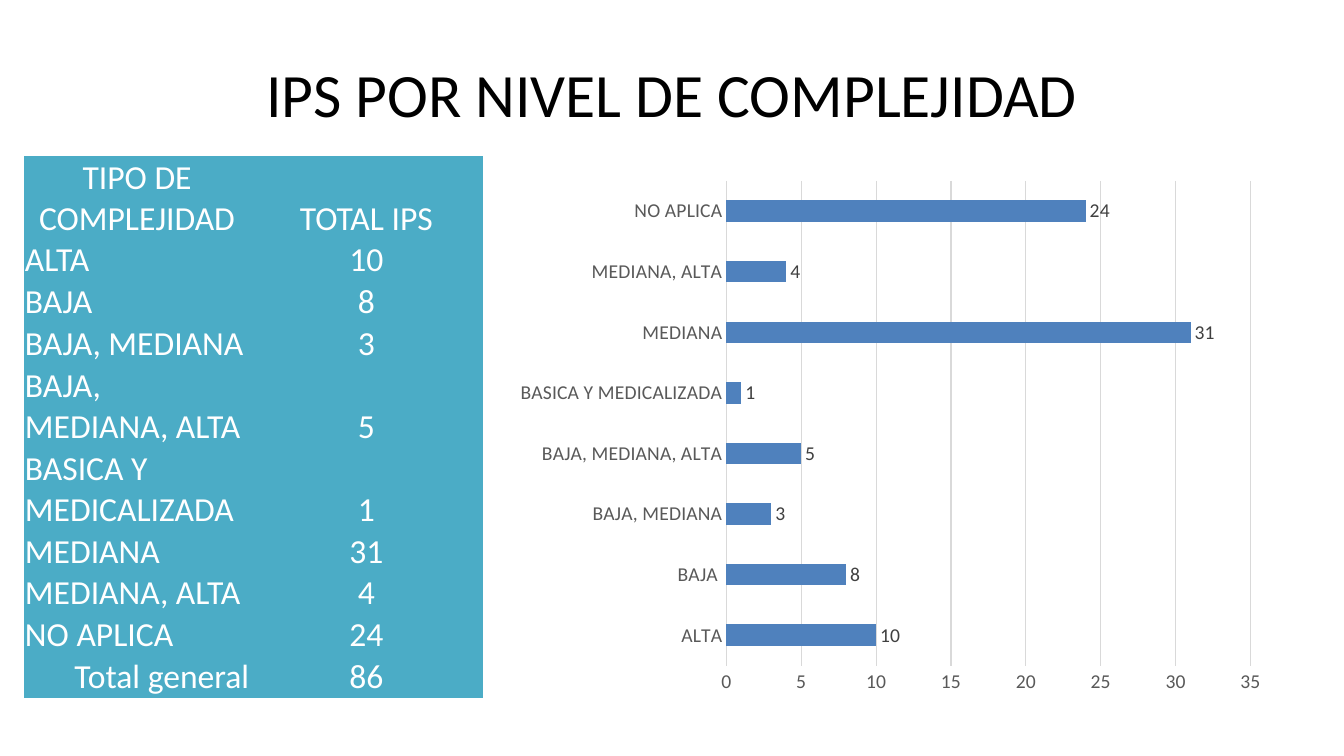
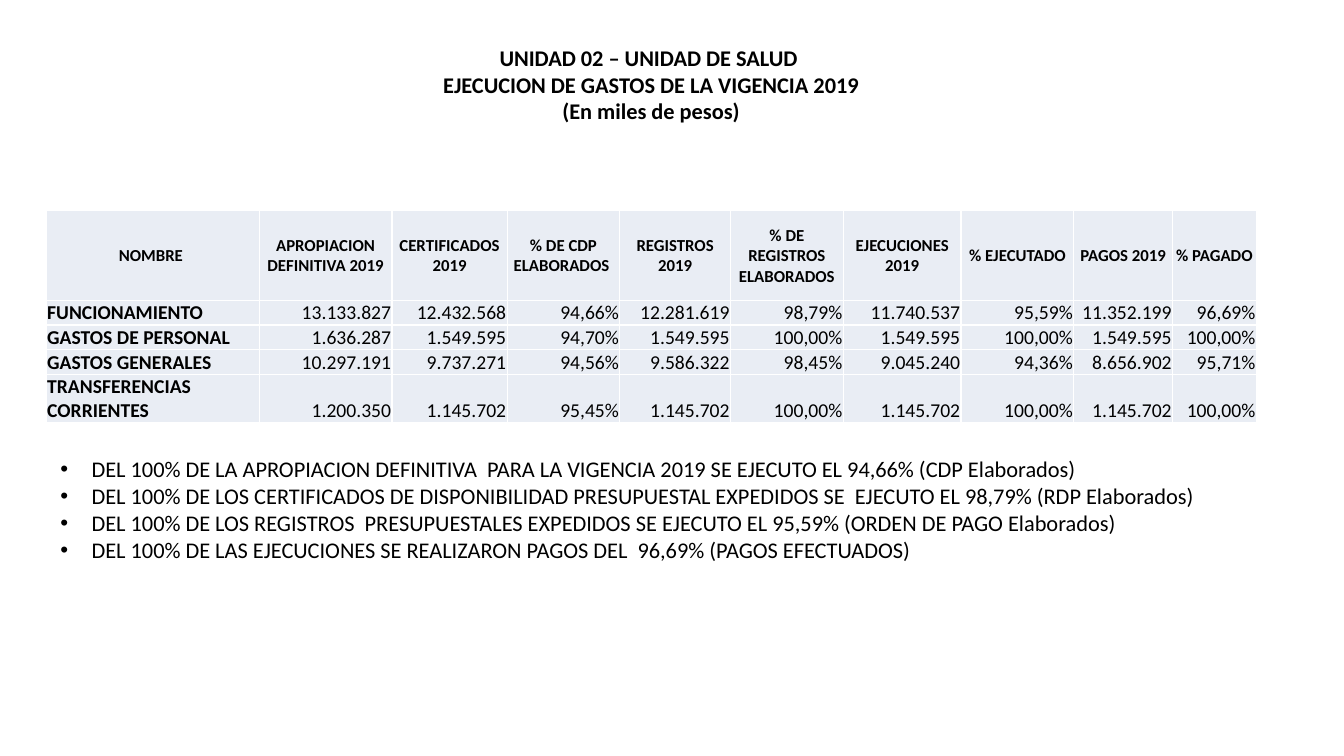
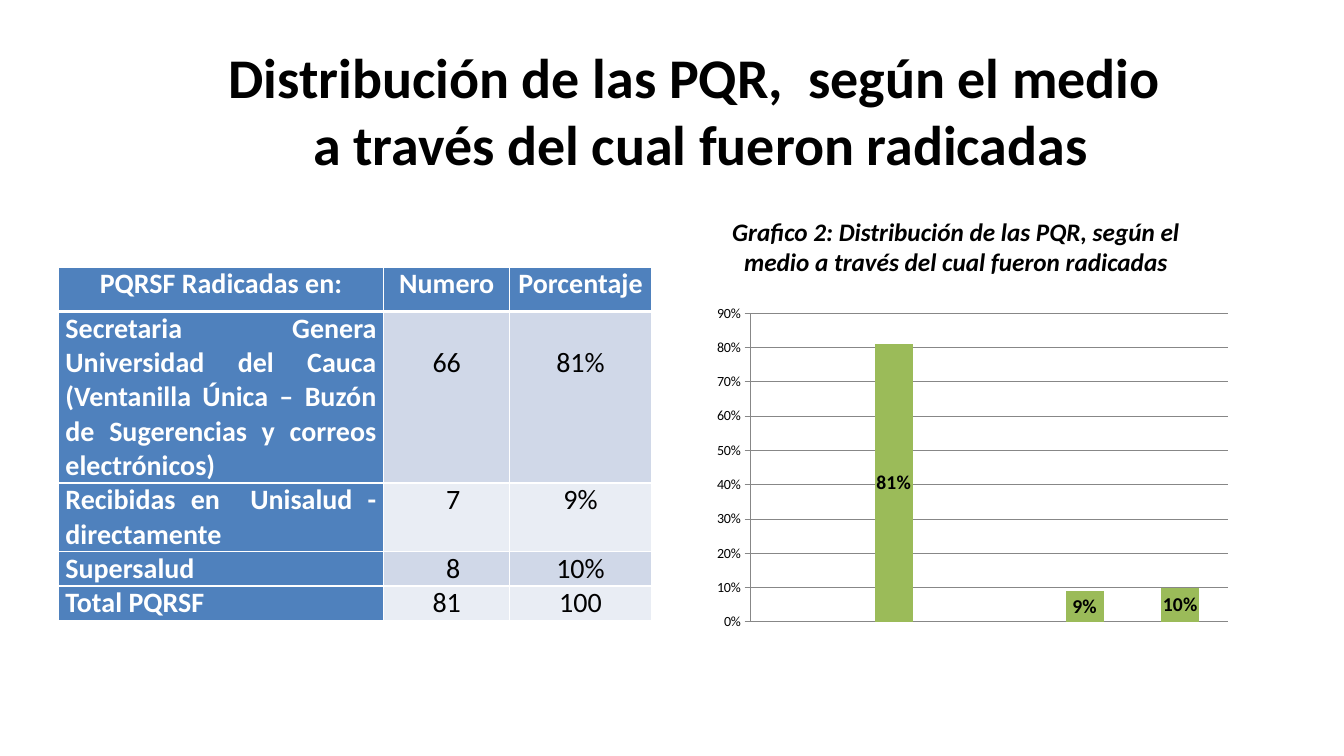
"""Build three slides on health providers, spending and user requests."""
from lxml import etree
from pptx import Presentation
from pptx.chart.data import CategoryChartData
from pptx.dml.color import RGBColor
from pptx.enum.chart import XL_CHART_TYPE, XL_LABEL_POSITION, XL_TICK_MARK
from pptx.enum.text import MSO_ANCHOR, MSO_AUTO_SIZE, PP_ALIGN
from pptx.oxml import parse_xml
from pptx.oxml.ns import nsdecls, qn
from pptx.util import Cm, Pt

LEFT, CENTER, RIGHT, JUSTIFY = PP_ALIGN.LEFT, PP_ALIGN.CENTER, PP_ALIGN.RIGHT, PP_ALIGN.JUSTIFY
TOP, MIDDLE, BOTTOM = MSO_ANCHOR.TOP, MSO_ANCHOR.MIDDLE, MSO_ANCHOR.BOTTOM
NO_FIT, GROW = MSO_AUTO_SIZE.NONE, MSO_AUTO_SIZE.SHAPE_TO_FIT_TEXT
BAR, COLUMN = XL_CHART_TYPE.BAR_CLUSTERED, XL_CHART_TYPE.COLUMN_STACKED
OUTSIDE, AT_CENTER = XL_LABEL_POSITION.OUTSIDE_END, XL_LABEL_POSITION.CENTER
TICK_NONE, TICK_OUT = XL_TICK_MARK.NONE, XL_TICK_MARK.OUTSIDE

FONT = "Calibri"
BLACK, WHITE, TEAL, BLUE, GREEN = "000000", "FFFFFF", "4BACC6", "4F81BD", "9BBB59"
BAND_DARK, BAND_LIGHT = "D0D8E8", "E9EDF4"
GREY_TEXT, GREY_LABEL, GREY_LINE, GREY_AXIS = "595959", "404040", "D9D9D9", "878787"
NO_STYLE = "{2D5ABB26-0587-4C30-8999-92F81FD0307C}"
hex_color = RGBColor.from_string


def write(p, text, size, color=BLACK, bold=False, italic=False, align=LEFT):
    """Write text into a paragraph, one run per line."""
    p.alignment = align
    for i, line in enumerate(text.split("\n")):
        if i:
            p.add_line_break()
        r = p.add_run()
        r.text = line
        r.font.name, r.font.size = FONT, Pt(size)
        r.font.bold, r.font.italic = bold, italic
        r.font.color.rgb = hex_color(color)


def set_cell(cell, text, size, color, bold, align, anchor, fill, margins, borders=None):
    """Fill one table cell; borders maps a side to a width in points."""
    write(cell.text_frame.paragraphs[0], text, size, color, bold, align=align)
    cell.vertical_anchor = anchor
    cell.margin_left, cell.margin_top, cell.margin_right, cell.margin_bottom = map(Cm, margins)
    tcPr = cell._tc.get_or_add_tcPr()
    for side, width in (borders or {}).items():
        ln = etree.SubElement(tcPr, qn(f"a:ln{side}"), w=str(Pt(width)))
        etree.SubElement(etree.SubElement(ln, qn("a:solidFill")), qn("a:srgbClr"), val=WHITE)
    cell.fill.solid()
    cell.fill.fore_color.rgb = hex_color(fill)


prs = Presentation()
prs.slide_width, prs.slide_height = Cm(33.87), Cm(19.05)

titles = [
    ("IPS POR NIVEL DE COMPLEJIDAD", 44, False, (1.7, 0.76, 30.48, 3.18)),
    ("UNIDAD 02 – UNIDAD DE SALUD \nEJECUCION DE GASTOS DE LA VIGENCIA 2019\n(En miles de pesos)",
     16, True, (5.64, 1.22, 21.54, 1.8)),
    ("Distribución de las PQR,  según el medio\n a través del cual fueron radicadas",
     40, True, (2.26, 1.17, 30.48, 3.18)),
]
for text, size, bold, box in titles:
    s = prs.slides.add_slide(prs.slide_layouts[5])
    sp = s.shapes.title
    sp.left, sp.top, sp.width, sp.height = map(Cm, box)
    tf = sp.text_frame
    tf.auto_size, tf.vertical_anchor = NO_FIT, MIDDLE
    write(tf.paragraphs[0], text, size, bold=bold, align=CENTER)

levels = [("ALTA", 10), ("BAJA ", 8), ("BAJA, MEDIANA", 3), ("BAJA, MEDIANA, ALTA", 5),
          ("BASICA Y MEDICALIZADA", 1), ("MEDIANA", 31), ("MEDIANA, ALTA", 4), ("NO APLICA", 24)]
level_rows = [("TIPO DE COMPLEJIDAD", "TOTAL IPS")]
level_rows += [(name.strip(), str(count)) for name, count in levels]
level_rows += [("Total general", str(sum(count for _, count in levels)))]

spending = [
    ("NOMBRE ", "APROPIACION DEFINITIVA 2019", "CERTIFICADOS 2019", "% DE CDP ELABORADOS ",
     "REGISTROS 2019", "% DE REGISTROS ELABORADOS", "EJECUCIONES 2019", "% EJECUTADO",
     "PAGOS 2019", "% PAGADO"),
    ("FUNCIONAMIENTO", "13.133.827", "12.432.568", "94,66%", "12.281.619", "98,79%",
     "11.740.537", "95,59%", "11.352.199", "96,69%"),
    ("GASTOS DE PERSONAL", "1.636.287", "1.549.595", "94,70%", "1.549.595", "100,00%",
     "1.549.595", "100,00%", "1.549.595", "100,00%"),
    ("GASTOS GENERALES", "10.297.191", "9.737.271", "94,56%", "9.586.322", "98,45%",
     "9.045.240", "94,36%", "8.656.902", "95,71%"),
    ("TRANSFERENCIAS CORRIENTES", "1.200.350", "1.145.702", "95,45%", "1.145.702", "100,00%",
     "1.145.702", "100,00%", "1.145.702", "100,00%"),
]

requests = [
    ("PQRSF Radicadas en:", "Numero", "Porcentaje"),
    ("Secretaria Genera Universidad del Cauca (Ventanilla Única – Buzón de Sugerencias y "
     "correos electrónicos)", "66", "81%"),
    ("Recibidas en  Unisalud - directamente", "7", "9%"),
    ("Supersalud", "8", "10%"),
    ("Total PQRSF", "81", "100"),
]

layouts = [
    (level_rows, (0.61, 3.94), [5.69, 5.87], [0.83] * 10),
    (spending, (1.17, 5.31), [5.36, 3.35, 2.9, 2.84, 2.79, 2.84, 2.97, 2.84, 2.49, 2.11],
     [2.26] + [0.36] * 4),
    (requests, (1.47, 6.73), [8.2, 3.18, 3.56], [1.12, 2.54] + [0.84] * 3),
]
tables = []
for s, (rows, (x, y), widths, heights) in zip(prs.slides, layouts):
    frame = s.shapes.add_table(len(rows), len(widths), Cm(x), Cm(y),
                               Cm(sum(widths)), Cm(sum(heights)))
    tbl = frame.table
    tbl._tbl.tblPr.find(qn("a:tableStyleId")).text = NO_STYLE
    for col, width in zip(tbl.columns, widths):
        col.width = Cm(width)
    for row, height in zip(tbl.rows, heights):
        row.height = Cm(height)
    tables.append(tbl)

tight = (0.02, 0.02, 0.02, 0)
thin = dict.fromkeys("LRTB", 1)
last = len(level_rows) - 1
for i, row in enumerate(level_rows):
    for j, text in enumerate(row):
        align = CENTER if j or i == 0 else RIGHT if i == last else LEFT
        set_cell(tables[0].cell(i, j), text, 24, WHITE, False, align, BOTTOM, TEAL, tight)

for i, row in enumerate(spending):
    for j, text in enumerate(row):
        align = CENTER if i == 0 else RIGHT if j else LEFT
        set_cell(tables[1].cell(i, j), text, 14 if i else 12, BLACK, i == 0 or j == 0, align,
                 MIDDLE if i == 0 else BOTTOM, BAND_LIGHT, tight, thin)

for i, row in enumerate(requests):
    for j, text in enumerate(row):
        head = i == 0 or j == 0
        fill = BLUE if head else BAND_DARK if i % 2 else BAND_LIGHT
        left = 0.5 if j == 1 and i in (2, 3) else 0.18
        top = 0.86 if j and i == 1 else 0
        set_cell(tables[2].cell(i, j), text, 20, WHITE if head else BLACK, head,
                 JUSTIFY if i and j == 0 else CENTER, TOP, fill, (left, top, 0.18, 0),
                 thin if i else {**thin, "B": 3})

charts = [
    (prs.slides[0], BAR, (12.73, 4.29, 19.43, 13.46), levels, 182, BLUE, 35, 5,
     "General", 14, GREY_TEXT, GREY_LINE, TICK_NONE, GREY_LABEL, False, OUTSIDE),
    (prs.slides[2], COLUMN, (16.41, 6.68, 16.71, 9.37),
     list(zip("12345", (None, 0.81, None, 0.09, 0.1))), 150, GREEN, 0.9, 0.1,
     "0%", 10, BLACK, GREY_AXIS, TICK_OUT, BLACK, True, AT_CENTER),
]
for (s, kind, box, points, gap, color, top, step, fmt, size, text_color, grid, tick,
     label_color, bold, position) in charts:
    data = CategoryChartData(number_format=fmt)
    data.categories = [name for name, _ in points]
    data.add_series("Series 1", [value for _, value in points])
    chart = s.shapes.add_chart(kind, *map(Cm, box), data).chart
    chart.has_legend = chart.has_title = False
    chart.font.name, chart.font.size = FONT, Pt(size)
    chart.font.color.rgb = hex_color(text_color)

    plot = chart.plots[0]
    plot.gap_width, plot.vary_by_categories = gap, False
    ser = plot.series[0]
    ser.format.fill.solid()
    ser.format.fill.fore_color.rgb = hex_color(color)
    plot.has_data_labels = True
    labels = plot.data_labels
    labels.show_value, labels.position = True, position
    labels.number_format, labels.number_format_is_linked = fmt, False
    labels.font.name, labels.font.size, labels.font.bold = FONT, Pt(14), bold
    labels.font.color.rgb = hex_color(label_color)

    val, cat = chart.value_axis, chart.category_axis
    val.minimum_scale, val.maximum_scale, val.major_unit = 0, top, step
    val.major_tick_mark, cat.major_tick_mark = tick, TICK_NONE
    val.tick_labels.number_format, val.tick_labels.number_format_is_linked = fmt, False
    val.has_major_gridlines = True
    for line in (val.major_gridlines.format.line, val.format.line, cat.format.line):
        line.width = Pt(0.75)
        line.color.rgb = hex_color(grid)
    if kind == BAR:
        val.format.line.fill.background()
    else:
        cat.visible = False
        plot.overlap = 100
        area = chart._chartSpace.chart.plotArea
        for old in area.findall(qn("c:layout")):
            area.remove(old)
        area.insert(0, parse_xml(
            f'<c:layout {nsdecls("c")}><c:manualLayout><c:layoutTarget val="inner"/>'
            '<c:xMode val="edge"/><c:yMode val="edge"/><c:x val="0.15"/><c:y val="0.13"/>'
            '<c:w val="0.72"/><c:h val="0.83"/></c:manualLayout></c:layout>'))

findings = [
    "DEL 100% DE LA APROPIACION DEFINITIVA  PARA LA VIGENCIA 2019 SE EJECUTO EL 94,66% "
    "(CDP Elaborados)",
    "DEL 100% DE LOS CERTIFICADOS DE DISPONIBILIDAD PRESUPUESTAL EXPEDIDOS SE  EJECUTO EL "
    "98,79% (RDP Elaborados)",
    "DEL 100% DE LOS REGISTROS  PRESUPUESTALES EXPEDIDOS SE EJECUTO EL 95,59% "
    "(ORDEN DE PAGO Elaborados)",
    "DEL 100% DE LAS EJECUCIONES SE REALIZARON PAGOS DEL  96,69% (PAGOS EFECTUADOS)",
]
tf = prs.slides[1].shapes.add_textbox(Cm(1.27), Cm(11.35), Cm(30.38), Cm(3.07)).text_frame
tf.word_wrap, tf.auto_size = True, GROW
for i, text in enumerate(findings):
    p = tf.add_paragraph() if i else tf.paragraphs[0]
    pPr = p._p.get_or_add_pPr()
    pPr.set("marL", str(Cm(0.79)))
    pPr.set("indent", str(-Cm(0.79)))
    etree.SubElement(pPr, qn("a:buFont"), typeface="Arial")
    etree.SubElement(pPr, qn("a:buChar"), char="•")
    write(p, text, 16)

tf = prs.slides[2].shapes.add_textbox(Cm(17.88), Cm(5.33), Cm(12.42), Cm(1.8)).text_frame
tf.word_wrap, tf.auto_size = True, GROW
write(tf.paragraphs[0],
      "Grafico 2: Distribución de las PQR, según el medio a través del cual fueron radicadas",
      18, bold=True, italic=True, align=CENTER)

prs.save("out.pptx")
